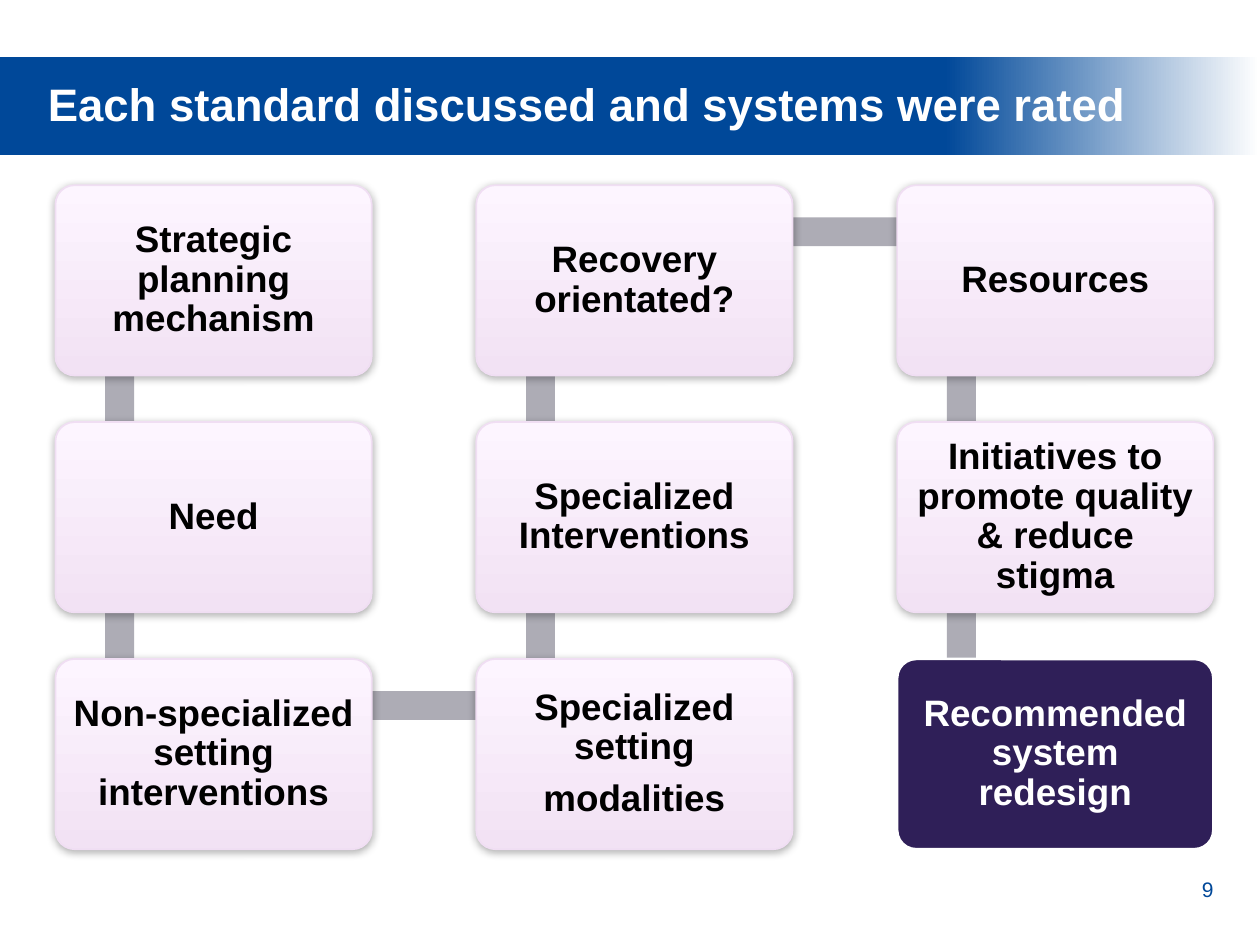
from lxml import etree
from pptx import Presentation
from pptx.dml.color import RGBColor
from pptx.enum.shapes import MSO_SHAPE as Shape
from pptx.enum.text import MSO_ANCHOR as Anchor, PP_ALIGN as Align
from pptx.oxml.ns import qn
from pptx.util import Inches, Pt

# Content: columns are read as a snake: down, up, down
TITLE = "Each standard discussed and systems were rated"
PAGE_NUMBER = "9"
COLUMNS = [
    ["Strategic planning mechanism", "Need", "Non-specialized setting interventions"],
    ["Recovery orientated?", "Specialized Interventions", "Specialized setting\nmodalities"],
    ["Resources", "Initiatives to promote quality & reduce stigma",
     "Recommended system redesign"],
]
LAST_STEP = (2, 2)

THEME = {
    "font": "Arial", "title_size": 26, "box_size": 21, "number_size": 12,
    "blue": "004899", "white": "FFFFFF", "black": "000000", "link": "ADACB5",
    "box_low": "F2E2F4", "box_high": "FDF5FF", "box_line": "F0DEF3", "final": "2F1F58",
}

# Grid, in inches
LEFT, TOP = 0.44, 1.47
STEP_X, STEP_Y = 3.34, 1.88
BOX_W, BOX_H = 2.51, 1.51
LINK_X, LINK_Y = 0.51, 0.37  # where links start inside a box
LINK_THICK = 0.23


def color(name):
    return RGBColor.from_string(THEME[name])


def style(para, size, ink, bold=True):
    for span in para.runs:
        span.font.name = THEME["font"]
        span.font.size = Pt(THEME[size])
        span.font.bold = bold
        span.font.color.rgb = color(ink)


def add_block(kind, left, top, width, height):
    block = page.shapes.add_shape(kind, *map(Inches, (left, top, width, height)))
    block.shadow.inherit = False
    block.line.fill.background()
    return block


def fill_solid(block, name):
    block.fill.solid()
    block.fill.fore_color.rgb = color(name)


def fill_gradient(block, first, last, angle, end=1):
    block.fill.gradient()
    block.fill.gradient_angle = angle
    for stop, name, position in zip(block.fill.gradient_stops, (first, last), (0, end)):
        stop.color.rgb = color(name)
        stop.position = position


def add_soft_shadow(block):
    effects = block._element.spPr.find(qn("a:effectLst"))
    shadow = etree.SubElement(effects, qn("a:outerShdw"), blurRad=str(Pt(5)),
                              dist=str(Pt(1)), dir="5400000", rotWithShape="0")
    ink = etree.SubElement(shadow, qn("a:srgbClr"), val=THEME["black"])
    etree.SubElement(ink, qn("a:alpha"), val="32000")


def corner(column, row):
    return LEFT + column * STEP_X, TOP + row * STEP_Y


def add_link(column, row, across=False):
    left, top = corner(column, row)
    x, y = left + LINK_X, top + LINK_Y
    half = LINK_THICK / 2
    if across:
        link = add_block(Shape.RECTANGLE, x, y - half, STEP_X, LINK_THICK)
    else:
        link = add_block(Shape.RECTANGLE, x - half, y, LINK_THICK, STEP_Y)
    fill_solid(link, "link")


def add_box(column, row, text):
    box = add_block(Shape.ROUNDED_RECTANGLE, *corner(column, row), BOX_W, BOX_H)
    box.adjustments[0] = 0.1
    final = (column, row) == LAST_STEP
    if final:
        fill_solid(box, "final")
    else:
        fill_gradient(box, "box_low", "box_high", 90)
        add_soft_shadow(box)
    box.line.color.rgb = color("white" if final else "box_line")
    box.line.width = Pt(1.5 if final else 1)

    frame = box.text_frame
    frame.text = text
    frame.word_wrap = True
    frame.vertical_anchor = Anchor.MIDDLE
    frame.margin_left = frame.margin_right = Inches(0.09)
    frame.margin_top = frame.margin_bottom = Inches(0.09)
    for index, para in enumerate(frame.paragraphs):
        para.alignment = Align.CENTER
        para.line_spacing = 0.9
        if index:
            para.space_before = Pt(7)
        style(para, "box_size", "white" if final else "black")


deck = Presentation()
deck.slide_width, deck.slide_height = Inches(10), Inches(7.5)
page = deck.slides.add_slide(deck.slide_layouts[5])

# Title on its fading band, which goes behind the title
band = add_block(Shape.RECTANGLE, 0, 0.45, 10, 0.78)
fill_gradient(band, "white", "blue", 180, 0.25)
page.shapes._spTree.insert(2, band._element)

title = page.shapes.title
title.left, title.top, title.width, title.height = map(Inches, (0.28, 0.53, 9.53, 0.62))
title.text_frame.text = TITLE
title.text_frame.vertical_anchor = Anchor.TOP
title.text_frame.margin_top = Inches(0.07)
title.text_frame.paragraphs[0].alignment = Align.LEFT
style(title.text_frame.paragraphs[0], "title_size", "white")

# Links first, so that the boxes cover their ends
for column in range(3):
    for row in range(2):
        add_link(column, row)
add_link(0, 2, across=True)
add_link(1, 0, across=True)

# Boxes
for column, texts in enumerate(COLUMNS):
    for row, text in enumerate(texts):
        add_box(column, row, text)

# Page number
number = page.shapes.add_textbox(*map(Inches, (9.32, 6.91, 0.41, 0.3)))
number.text_frame.text = PAGE_NUMBER
number.text_frame.word_wrap = True
number.text_frame.paragraphs[0].alignment = Align.RIGHT
style(number.text_frame.paragraphs[0], "number_size", "blue", bold=False)

deck.save("out.pptx")
